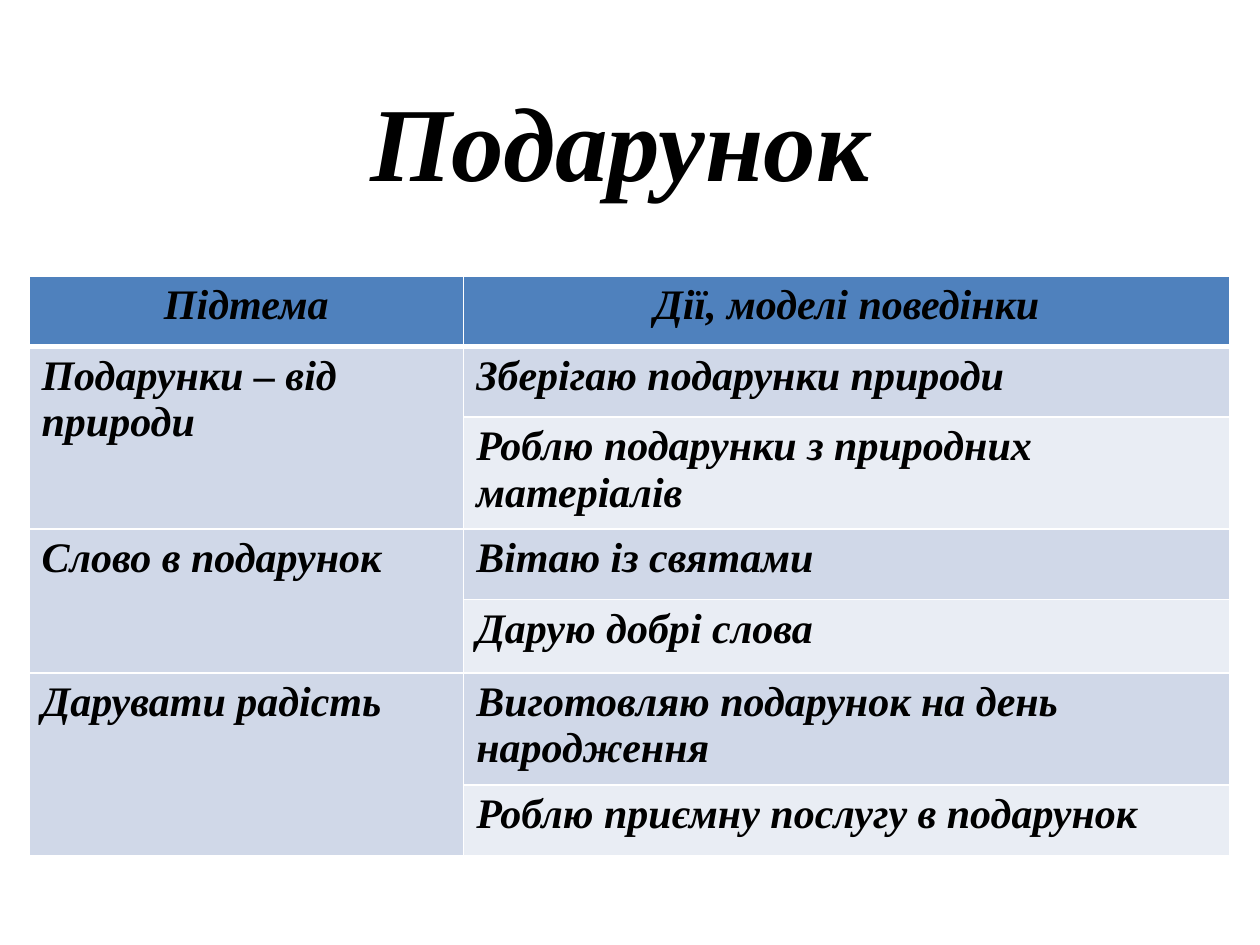
from lxml import etree
from pptx import Presentation
from pptx import util as u
from pptx.dml.color import RGBColor
from pptx.enum import text
from pptx.oxml import ns

COLORS = {"ink": "000000", "header": "4F81BD", "odd": "D0D8E8", "even": "E9EDF4", "border": "FFFFFF"}
FONT = {"name": "Times New Roman", "bold": True, "italic": True}
HEADINGS = ["Підтема", "Дії, моделі поведінки"]
SUBTOPICS = [
    ("Подарунки – від природи", ["Зберігаю подарунки природи", "Роблю подарунки з природних матеріалів"]),
    ("Слово в подарунок", ["Вітаю із святами", "Дарую добрі слова"]),
    ("Дарувати радість", ["Виготовляю подарунок на день народження", "Роблю приємну послугу в подарунок"]),
]
COLUMN_WIDTHS = [3.45, 6.08]
ROW_HEIGHTS = [0.56, 0.56, 0.89, 0.56, 0.58, 0.89, 0.56]


def write(frame, words, size, align):
    frame.text = words
    paragraph = frame.paragraphs[0]
    paragraph.alignment = align
    font = paragraph.runs[0].font
    for key, value in {**FONT, "size": u.Pt(size)}.items():
        setattr(font, key, value)
    font.color.rgb = RGBColor.from_string(COLORS["ink"])


def add_title(slide, words):
    title = slide.shapes.title
    place = {"left": 2.5, "top": 0.55, "width": 4.84, "height": 1.11}
    for key, value in place.items():
        setattr(title, key, u.Inches(value))
    frame = title.text_frame
    layout = {"word_wrap": False, "auto_size": text.MSO_AUTO_SIZE.NONE,
              "vertical_anchor": text.MSO_ANCHOR.BOTTOM}
    for key, value in layout.items():
        setattr(frame, key, value)
    write(frame, words, 60, text.PP_ALIGN.CENTER)


def style_cell(cell, color, bottom_width):
    properties = cell._tc.get_or_add_tcPr()
    for side, width in {"L": 1, "R": 1, "T": 1, "B": bottom_width}.items():
        line = etree.SubElement(properties, ns.qn(f"a:ln{side}"), w=str(u.Pt(width)))
        fill = etree.SubElement(line, ns.qn("a:solidFill"))
        etree.SubElement(fill, ns.qn("a:srgbClr"), val=COLORS[color_key])if (color_key := "border") else None
    cell.fill.solid()
    cell.fill.fore_color.rgb = RGBColor.from_string(COLORS[color])


def add_subtopics(slide):
    table = slide.shapes.add_table(
        len(ROW_HEIGHTS), len(COLUMN_WIDTHS), u.Inches(0.23), u.Inches(2.19),
        u.Inches(sum(COLUMN_WIDTHS)), u.Inches(sum(ROW_HEIGHTS))).table
    for column, width in zip(table.columns, COLUMN_WIDTHS):
        column.width = u.Inches(width)
    for row, height in zip(table.rows, ROW_HEIGHTS):
        row.height = u.Inches(height)
    for index, heading in enumerate(HEADINGS):
        cell = table.cell(0, index)
        write(cell.text_frame, heading, 24, text.PP_ALIGN.CENTER)
        style_cell(cell, "header", 3)
    for group, (subtopic, actions) in enumerate(SUBTOPICS):
        first = 1 + group * len(actions)
        topic_cell = table.cell(first, 0)
        topic_cell.merge(table.cell(first + len(actions) - 1, 0))
        write(topic_cell.text_frame, subtopic, 24, text.PP_ALIGN.LEFT)
        for offset, (action, color) in enumerate(zip(actions, ["odd", "even"])):
            action_cell = table.cell(first + offset, 1)
            write(action_cell.text_frame, action, 24, text.PP_ALIGN.LEFT)
            style_cell(table.cell(first + offset, 0), "odd", 1)
            style_cell(action_cell, color, 1)


def main():
    deck = Presentation()
    deck.slide_width, deck.slide_height = u.Inches(10), u.Inches(7.5)
    slide = deck.slides.add_slide(deck.slide_layouts[5])
    add_title(slide, "Подарунок")
    add_subtopics(slide)
    deck.save("out.pptx")


if __name__ == "__main__":
    main()
